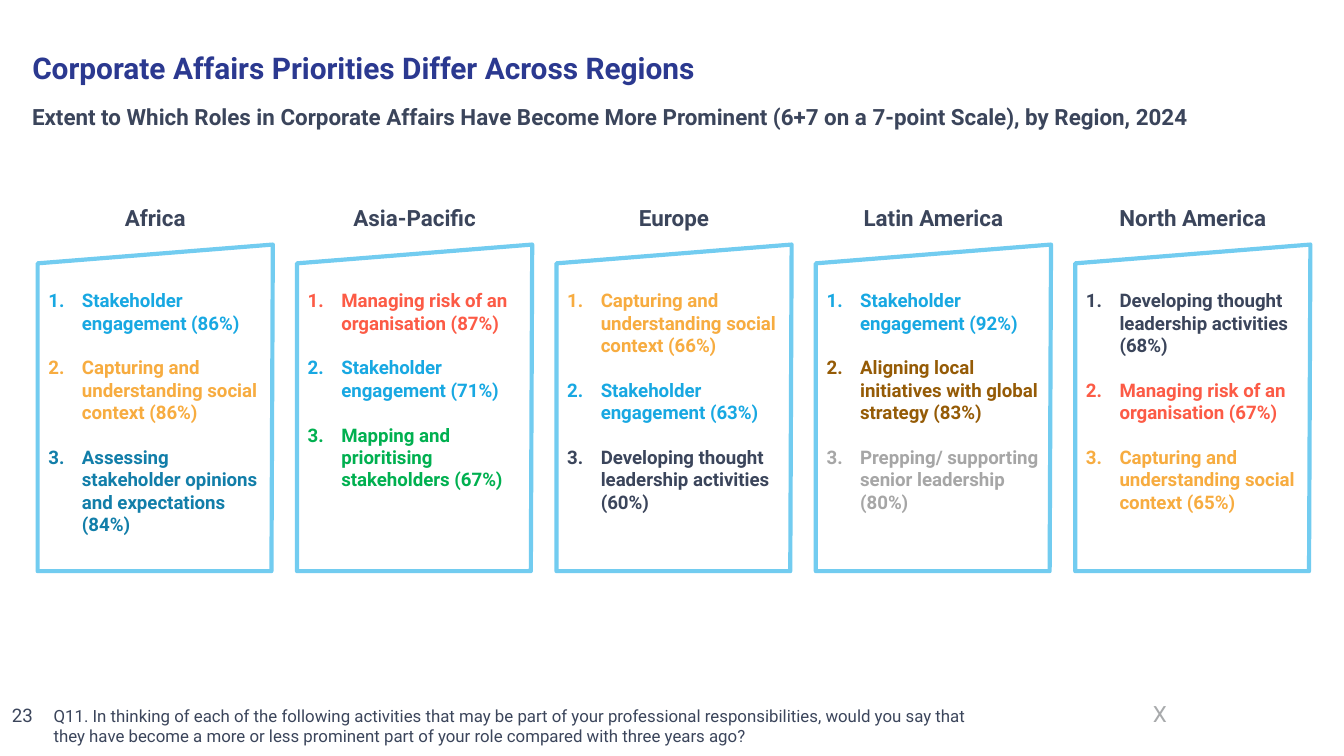
import pptx
import pptx.util
import pptx.dml.color
import pptx.enum.text
from lxml import etree
from pptx.oxml.ns import qn
from pptx.util import Inches, Pt

COLORS = {
    "navy": "2B3990", "slate": "3B455B", "silver": "A8AAAC", "frame": "72CCF0",
    "blue": "18A8E2", "amber": "F7AC40", "teal": "127EA9", "red": "FC5B46",
    "green": "00B050", "brown": "955B06", "grey": "A6A6A6",
}
ENGAGE = "Stakeholder engagement"
CONTEXT = "Capturing and understanding social context"
THOUGHT = "Developing thought leadership activities"
RISK = "Managing risk of an organisation"
OPINION = "Assessing stakeholder opinions and expectations"
MAPPING = "Mapping and prioritising stakeholders"
ALIGN = "Aligning local initiatives with global strategy"
PREP = "Prepping/ supporting senior leadership"
ROLES = {
    ENGAGE: "blue", CONTEXT: "amber", THOUGHT: "slate", RISK: "red",
    OPINION: "teal", MAPPING: "green", ALIGN: "brown", PREP: "grey",
}
REGIONS = {
    "Africa": [(ENGAGE, 86), (CONTEXT, 86), (OPINION, 84)],
    "Asia-Pacific": [(RISK, 87), (ENGAGE, 71), (MAPPING, 67)],
    "Europe": [(CONTEXT, 66), (ENGAGE, 63), (THOUGHT, 60)],
    "Latin America": [(ENGAGE, 92), (ALIGN, 83), (PREP, 80)],
    "North America": [(THOUGHT, 68), (RISK, 67), (CONTEXT, 65)],
}
LEFT, TOP, STEP = 0.28, 1.82, 1.93
WIDE, HIGH, SLANT = 1.75, 2.43, 0.14
ALIGNS = pptx.enum.text.PP_ALIGN


def paint(name):
    """Return the named colour as an RGB value."""
    return pptx.dml.color.RGBColor.from_string(COLORS[name])


def style(para, size, color, bold=False, align=ALIGNS.LEFT):
    """Set the font and alignment of a paragraph."""
    para.alignment = align
    font = para.font
    font.name, font.size, font.bold = "Roboto", Pt(size), bold
    font.color.rgb = paint(color)


def add_title(slide, text):
    """Place and format the title."""
    title = slide.shapes.title
    title.left, title.top = Inches(0.14), Inches(0.35)
    title.width, title.height = Inches(9.47), Inches(0.34)
    frame = title.text_frame
    frame.text = text
    frame.vertical_anchor = pptx.enum.text.MSO_ANCHOR.MIDDLE
    para = frame.paragraphs[0]
    para.line_spacing = 0.9
    style(para, 16, "navy", True)


def add_text(slide, text, place, size, color="slate", bold=False, align=ALIGNS.LEFT):
    """Add a wrapped text box of one paragraph."""
    box = slide.shapes.add_textbox(*map(Inches, place))
    box.text_frame.word_wrap = True
    box.text_frame.text = text
    style(box.text_frame.paragraphs[0], size, color, bold, align)


def number(para):
    """Give a paragraph an automatic number and a hanging indent."""
    props = para._p.get_or_add_pPr()
    props.set("marL", str(Inches(0.25)))
    props.set("indent", str(-Inches(0.25)))
    etree.SubElement(props, qn("a:buFont"), typeface="+mj-lt")
    etree.SubElement(props, qn("a:buAutoNum"), type="arabicPeriod")


def add_panel(slide, left, items):
    """Draw a slanted frame with its ranked list of roles."""
    right, base = left + WIDE, TOP + HIGH
    corners = [(right, TOP), (right - 0.01, base), (left, base)]
    build = slide.shapes.build_freeform(
        Inches(left), Inches(TOP + SLANT))
    build.add_line_segments([(Inches(x), Inches(y)) for x, y in corners])
    panel = build.convert_to_shape()
    panel.shadow.inherit = False
    panel.fill.background()
    panel.line.color.rgb = paint("frame")
    panel.line.width = Pt(2.25)
    frame = panel.text_frame
    frame.word_wrap = True
    frame.vertical_anchor = pptx.enum.text.MSO_ANCHOR.TOP
    frame.margin_left = frame.margin_right = frame.margin_bottom = Inches(0.08)
    frame.margin_top = Inches(0.33)
    frame.text = "\n".join(f"{role} ({share}%)" for role, share in items)
    for para, (role, _) in zip(frame.paragraphs, items):
        number(para)
        para.space_after = Pt(12)
        style(para, 10, ROLES[role], True)


def main():
    """Build the slide and save it."""
    deck = pptx.Presentation()
    deck.slide_width = Inches(10)
    deck.slide_height = deck.slide_width * 9 // 16
    slide = deck.slides.add_slide(deck.slide_layouts[5])
    add_title(slide, "Corporate Affairs Priorities Differ Across Regions")
    add_text(slide, "Extent to Which Roles in Corporate Affairs Have Become More "
             "Prominent (6+7 on a 7-point Scale), by Region, 2024",
             (0.14, 0.72, 9.47, 0.3), 12, bold=True)
    for rank, (region, items) in enumerate(REGIONS.items()):
        left = LEFT + rank * STEP
        add_text(slide, region, (left, 1.47, WIDE, 0.3), 12, bold=True,
                 align=ALIGNS.CENTER)
        add_panel(slide, left, items)
    add_text(slide, "23", (-0.01, 5.19, 0.39, 0.28), 10)
    add_text(slide, "Q11. In thinking of each of the following activities that may be "
             "part of your professional responsibilities, would you say that they have "
             "become a more or less prominent part of your role compared with three "
             "years ago?", (0.3, 5.2, 7.08, 0.4), 9)
    add_text(slide, "X", (8.48, 5.16, 0.3, 0.3), 12, "silver")
    deck.save("out.pptx")


if __name__ == "__main__":
    main()
